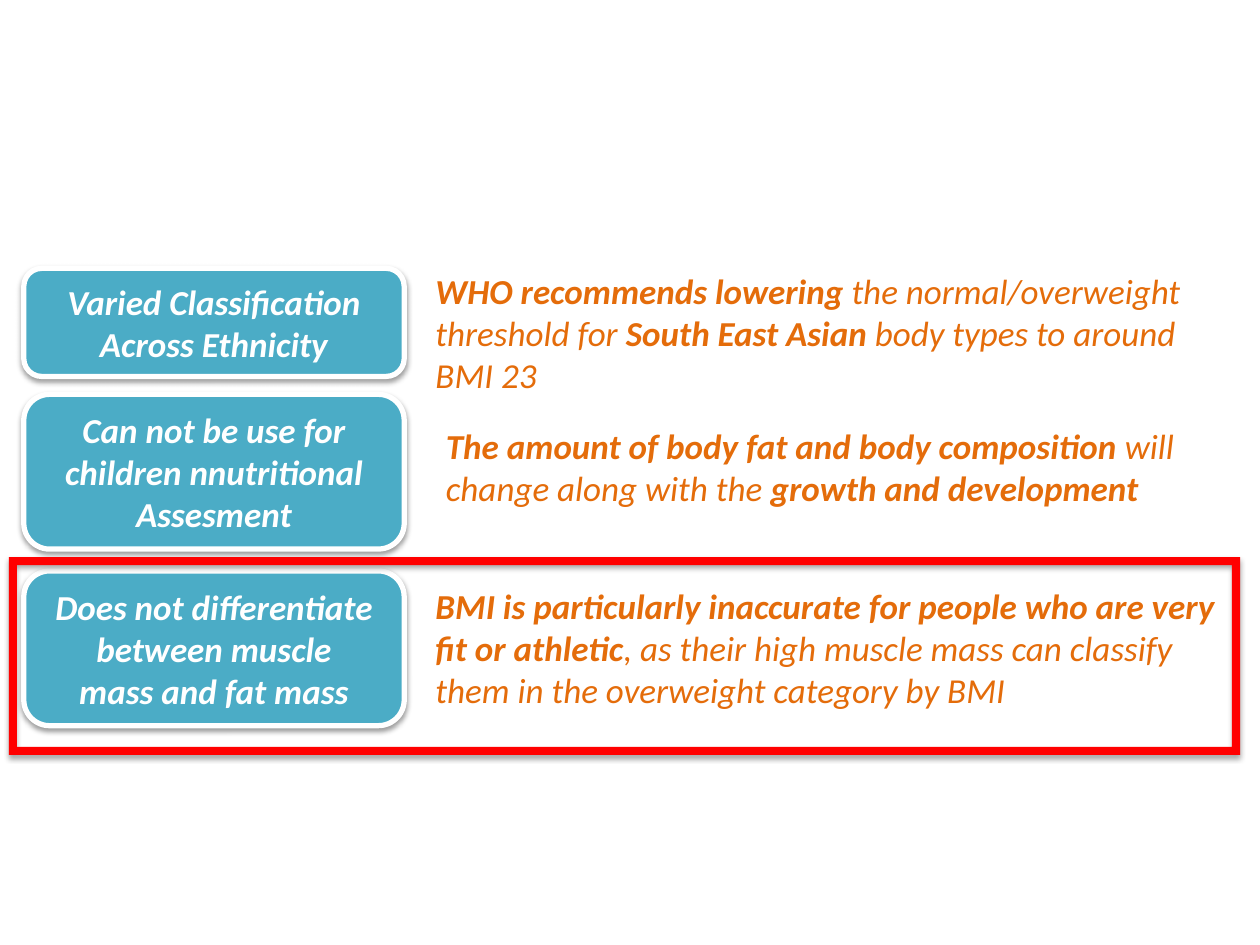
from dataclasses import dataclass
from typing import NamedTuple

from lxml.etree import SubElement
from pptx import Presentation
from pptx.dml.color import RGBColor
from pptx.enum.shapes import MSO_SHAPE
from pptx.enum.text import MSO_ANCHOR, MSO_AUTO_SIZE, PP_ALIGN
from pptx.oxml.ns import qn
from pptx.util import Cm, Pt


@dataclass(frozen=True)
class Theme:
    font: str = "Calibri"
    size: Pt = Pt(20)
    teal: RGBColor = RGBColor(0x4B, 0xAC, 0xC6)
    white: RGBColor = RGBColor(0xFF, 0xFF, 0xFF)
    orange: RGBColor = RGBColor(0xE4, 0x6C, 0x0A)
    red: RGBColor = RGBColor(0xFF, 0x00, 0x00)
    border: Pt = Pt(3)


class Box(NamedTuple):
    """Left, top, width and height in centimetres."""
    left: float
    top: float
    width: float
    height: float

    def lengths(self) -> list[Cm]:
        return [Cm(value) for value in self]


class Phrase(NamedTuple):
    text: str
    bold: bool = False


@dataclass(frozen=True)
class Limitation:
    label: str
    label_top: float
    label_height: float
    explanation: list[Phrase]
    explanation_box: Box


THEME = Theme()
LABEL_LEFT, LABEL_WIDTH = 0.48, 7.67
HIGHLIGHT_BOX = Box(0.18, 11.23, 24.82, 3.99)

LIMITATIONS = [
    Limitation(
        "Varied Classification Across Ethnicity", 5.41, 2.18,
        [Phrase("WHO recommends lowering ", True),
         Phrase("the normal/overweight threshold for "),
         Phrase("South East Asian ", True),
         Phrase("body types to around BMI 23")],
        Box(8.53, 5.31, 16.08, 2.82)),
    Limitation(
        "Can not be use for children nnutritional Assesment", 7.95, 3.12,
        [Phrase("The amount of body fat and body composition ", True),
         Phrase("will change along with the "),
         Phrase("growth and development", True)],
        Box(8.74, 8.43, 16.28, 1.96)),
    Limitation(
        "Does not differentiate between muscle\nmass and fat mass", 11.51, 3.12,
        [Phrase("BMI is particularly inaccurate for people who are very "
                "fit or athletic", True),
         Phrase(", as their high muscle mass can classify them in the "
                "overweight category by BMI")],
        Box(8.53, 11.66, 16.28, 2.82)),
]


def add_shadow(shape, opacity: int, distance: float) -> None:
    """Drop a soft black shadow straight down."""
    shape.shadow.inherit = False
    effects = shape._element.spPr.find(qn("a:effectLst"))
    shadow = SubElement(effects, qn("a:outerShdw"), blurRad=str(Pt(3.1)),
                        dist=str(Pt(distance)), dir="5400000", rotWithShape="0")
    black = SubElement(shadow, qn("a:srgbClr"), val="000000")
    SubElement(black, qn("a:alpha"), val=str(opacity * 1000))


def style_run(run, color: RGBColor, bold: bool) -> None:
    run.font.name = THEME.font
    run.font.size = THEME.size
    run.font.italic = True
    run.font.bold = bold
    run.font.color.rgb = color


def fit_frame(frame) -> None:
    frame.word_wrap = True
    frame.auto_size = MSO_AUTO_SIZE.SHAPE_TO_FIT_TEXT


def add_label(slide, limitation: Limitation) -> None:
    box = Box(LABEL_LEFT, limitation.label_top, LABEL_WIDTH, limitation.label_height)
    label = slide.shapes.add_shape(MSO_SHAPE.ROUNDED_RECTANGLE, *box.lengths())
    label.fill.solid()
    label.fill.fore_color.rgb = THEME.teal
    label.line.color.rgb = THEME.white
    label.line.width = THEME.border
    add_shadow(label, opacity=38, distance=1.6)
    frame = label.text_frame
    fit_frame(frame)
    frame.vertical_anchor = MSO_ANCHOR.MIDDLE
    frame.text = limitation.label
    for paragraph in frame.paragraphs:
        paragraph.alignment = PP_ALIGN.CENTER
        for run in paragraph.runs:
            style_run(run, THEME.white, bold=True)


def add_explanation(slide, limitation: Limitation) -> None:
    explanation = slide.shapes.add_textbox(*limitation.explanation_box.lengths())
    fit_frame(explanation.text_frame)
    paragraph = explanation.text_frame.paragraphs[0]
    for phrase in limitation.explanation:
        run = paragraph.add_run()
        run.text = phrase.text
        style_run(run, THEME.orange, phrase.bold)


def add_highlight(slide, box: Box) -> None:
    highlight = slide.shapes.add_shape(MSO_SHAPE.FRAME, *box.lengths())
    highlight.adjustments[0] = 0.041
    highlight.fill.solid()
    highlight.fill.fore_color.rgb = THEME.red
    highlight.line.fill.background()
    add_shadow(highlight, opacity=35, distance=1.8)


def main() -> None:
    presentation = Presentation()
    presentation.slide_width, presentation.slide_height = Cm(25.4), Cm(19.05)
    slide = presentation.slides.add_slide(presentation.slide_layouts[6])

    # Labels on the left, explanations on the right
    for limitation in LIMITATIONS:
        add_label(slide, limitation)
        add_explanation(slide, limitation)

    # Red frame around the last limitation
    add_highlight(slide, HIGHLIGHT_BOX)

    presentation.save("out.pptx")


if __name__ == "__main__":
    main()
